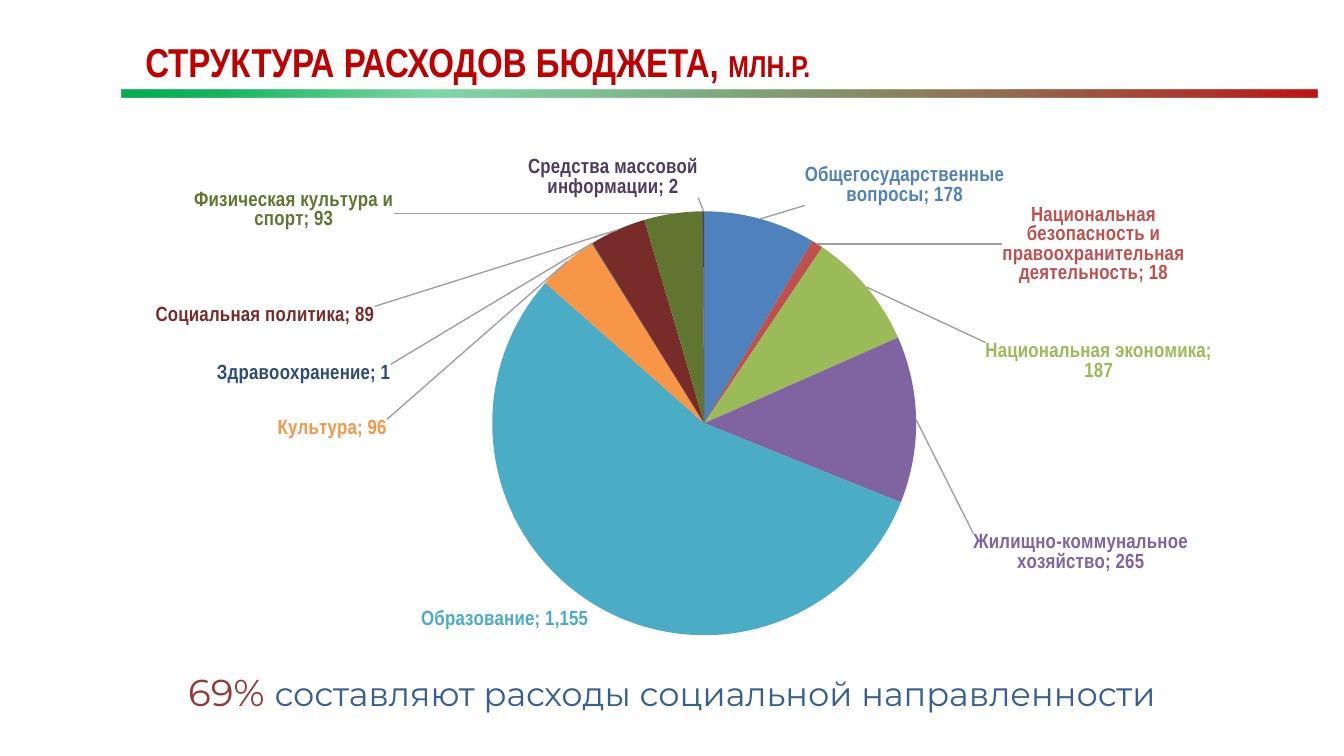
from lxml import etree
from pptx import Presentation
from pptx.chart.data import CategoryChartData
from pptx.dml.color import RGBColor
from pptx.enum.chart import XL_CHART_TYPE, XL_LABEL_POSITION
from pptx.enum.shapes import MSO_SHAPE
from pptx.enum.text import MSO_ANCHOR, PP_ALIGN
from pptx.oxml import parse_xml
from pptx.oxml.ns import qn
from pptx.util import Inches, Pt

PIE, RECT = XL_CHART_TYPE.PIE, MSO_SHAPE.RECTANGLE
OUTSIDE = XL_LABEL_POSITION.OUTSIDE_END
MIDDLE = MSO_ANCHOR.MIDDLE
LEFT, CENTER = PP_ALIGN.LEFT, PP_ALIGN.CENTER
W = 10
H = W * 9 / 16
NARROW, BODY, FOOT = "Arial Narrow", "Calibri", "Montserrat"
COLORS = {"title": "C00000", "percent": "953735", "footer": "376092",
          "green": "00B050", "red": "C21414", "leader": "A0A0A0", "black": "000000"}
NS = 'xmlns:{0}="http://schemas.openxmlformats.org/drawingml/2006/{1}"'
NS_A, NS_C = NS.format("a", "main"), NS.format("c", "chart")

# Boxes: left, top, width, height in percent of the slide
TITLE_BOX = (9.83, 4, 85.2, 8.2)
BAR_BOX = (9.05, 11.85, 89, 1.1)
CHART_BOX = (8.7, 17.45, 87.4, 70.1)
FOOTER_BOX = (5.9, 87.55, 88.2, 7.8)
PLOT = {"x": 0.08, "y": 0.15, "w": 0.84, "h": 0.8}

# Category, value, colour, label shift in percent of the chart
EXPENSES = [
    ("Общегосударственные вопросы", 178, "4F81BD", (3.6, -1.1)),
    ("Национальная безопасность и правоохранительная деятельность", 18, "C0504D", (15.4, 8.8)),
    ("Национальная экономика", 187, "9BBB59", (9.6, 18.8)),
    ("Жилищно-коммунальное хозяйство", 265, "8064A2", (4.2, 25.2)),
    ("Образование", 1155, "4BACC6", None),
    ("Культура", 96, "F79646", (-14.9, 34.6)),
    ("Здравоохранение", 1, "2C4D75", (-16.8, 27.8)),
    ("Социальная политика", 89, "772C2A", (-20.4, 19.5)),
    ("Физическая культура и спорт", 93, "5F7530", (-23.7, 4.6)),
    ("Средства массовой информации", 2, "4D3B62", (-7.7, -1.1)),
]


def place(box):
    x, y, w, h = box
    return [Inches(v * side / 100) for v, side in ((x, W), (y, H), (w, W), (h, H))]


def style(font, name, size, color, bold=False):
    font.name, font.size, font.bold = name, Pt(size), bold
    font.color.rgb = RGBColor.from_string(color)


def add_line_of_text(slide, box, runs, align):
    """Add one paragraph; each run is text, font, size, colour, bold."""
    tf = slide.shapes.add_textbox(*place(box)).text_frame
    tf.word_wrap = True
    tf.vertical_anchor = MIDDLE
    p = tf.paragraphs[0]
    p.alignment = align
    for text, *look in runs:
        r = p.add_run()
        r.text = text
        style(r.font, *look)


def add_gradient_bar(slide, box):
    sp = slide.shapes.add_shape(RECT, *place(box))
    sp.shadow.inherit = False
    sp.line.fill.background()
    sp.fill.gradient()
    sp.fill.gradient_angle = 0
    stops = sp._element.spPr.find(qn("a:gradFill")).find(qn("a:gsLst"))
    for old in list(stops):
        stops.remove(old)
    for pos, color, alpha in ((0, "green", 100), (8, "green", 93),
                              (26, "green", 50), (100, "red", 100)):
        stops.append(parse_xml(
            f'<a:gs {NS_A} pos="{pos * 1000}"><a:srgbClr val="{COLORS[color]}">'
            f'<a:alpha val="{alpha * 1000}"/></a:srgbClr></a:gs>'))


def manual_layout(values, inner=False):
    target = '<c:layoutTarget val="inner"/><c:xMode val="edge"/><c:yMode val="edge"/>'
    parts = "".join(f'<c:{k} val="{v}"/>' for k, v in values.items())
    return parse_xml(f'<c:layout {NS_C}><c:manualLayout>{target if inner else ""}'
                     f'{parts}</c:manualLayout></c:layout>')


def label_slice(point, color, shift):
    label = point.data_label
    style(label.font, NARROW, 11, color, True)
    label.position = OUTSIDE
    d = label._dLbl
    d.find(qn("c:showCatName")).set("val", "1")
    d.find(qn("c:showPercent")).set("val", "0")
    etree.SubElement(d, qn("c:separator")).text = "; "
    if shift:
        x, y = shift
        d.find(qn("c:idx")).addnext(manual_layout({"x": x / 100, "y": y / 100}))


def add_expense_pie(slide, box):
    data = CategoryChartData(number_format="#,##0")
    data.categories = [name for name, *_ in EXPENSES]
    data.add_series("Series 1", [value for _, value, *_ in EXPENSES])
    chart = slide.shapes.add_chart(PIE, *place(box), data).chart
    chart.has_legend = chart.has_title = False
    style(chart.font, BODY, 10, COLORS["black"])
    plot = chart.plots[0]
    plot.vary_by_categories = True
    area = chart._chartSpace.chart.plotArea
    for old in area.findall(qn("c:layout")):
        area.remove(old)
    area.insert(0, manual_layout(PLOT, inner=True))

    series = plot.series[0]
    labels = series.data_labels
    labels.number_format, labels.number_format_is_linked = "#,##0", False
    labels.position = OUTSIDE
    labels.show_value, labels.show_category_name = False, True
    style(labels.font, NARROW, 11, EXPENSES[0][2], True)
    for i, (_, _, color, shift) in enumerate(EXPENSES):
        point = series.points[i]
        point.format.fill.solid()
        point.format.fill.fore_color.rgb = RGBColor.from_string(color)
        label_slice(point, color, shift)

    group = labels._element
    lead = group.find(qn("c:showLeaderLines"))
    if lead is None:
        lead = etree.SubElement(group, qn("c:showLeaderLines"))
    lead.set("val", "1")
    lead.addnext(parse_xml(
        f'<c:leaderLines {NS_C} {NS_A}><c:spPr><a:ln w="9525"><a:solidFill>'
        f'<a:srgbClr val="{COLORS["leader"]}"/></a:solidFill></a:ln></c:spPr></c:leaderLines>'))


def main():
    prs = Presentation()
    prs.slide_width, prs.slide_height = Inches(W), Inches(H)
    slide = prs.slides.add_slide(prs.slide_layouts[6])
    add_line_of_text(slide, TITLE_BOX, [
        ("СТРУКТУРА РАСХОДОВ БЮДЖЕТА, ", NARROW, 21.6, COLORS["title"], True),
        ("МЛН.Р.", NARROW, 16.2, COLORS["title"], True)], LEFT)
    add_gradient_bar(slide, BAR_BOX)
    add_expense_pie(slide, CHART_BOX)
    add_line_of_text(slide, FOOTER_BOX, [
        ("69% ", FOOT, 20, COLORS["percent"]),
        ("составляют расходы социальной направленности", FOOT, 18, COLORS["footer"])], CENTER)
    prs.save("out.pptx")


if __name__ == "__main__":
    main()
